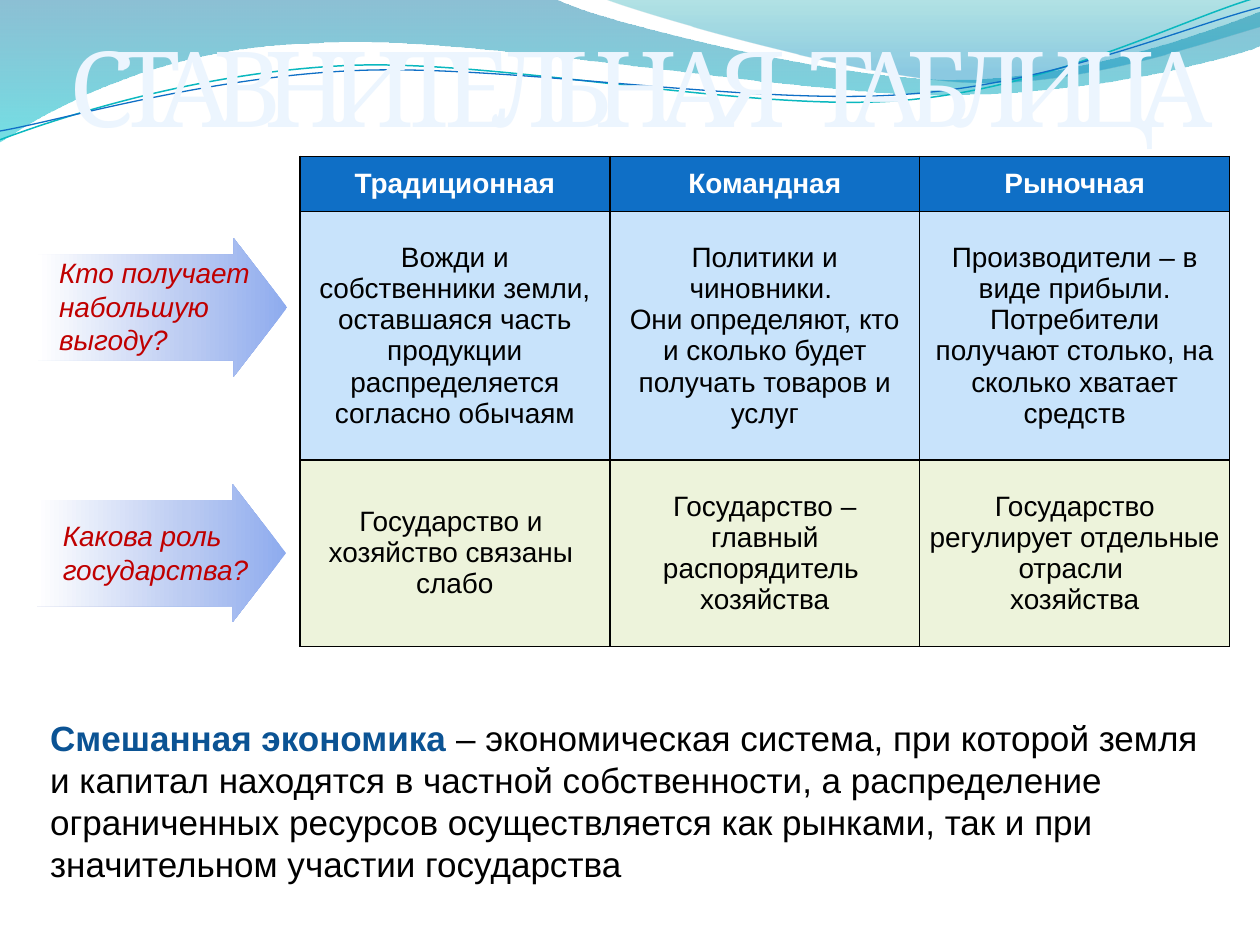
import math

import pptx
import pptx.dml.color
import pptx.enum.shapes
import pptx.enum.text
import pptx.oxml
import pptx.oxml.ns
import pptx.util
from pptx.util import Inches

NAMESPACE = pptx.oxml.ns.nsdecls("a")
ALIGN = pptx.enum.text.PP_ALIGN


def color(hex_string):
    return pptx.dml.color.RGBColor.from_string(hex_string)


def line_xml(tag, hex_string, points):
    return pptx.oxml.parse_xml(
        f'<a:{tag} {NAMESPACE} w="{round(points * 12700)}"><a:solidFill>'
        f'<a:srgbClr val="{hex_string}"/></a:solidFill></a:{tag}>')


def rotate(points, degrees, center):
    """Turn points clockwise about a center."""
    sine, cosine = math.sin(math.radians(degrees)), math.cos(math.radians(degrees))
    center_x, center_y = center
    return [(center_x + (x - center_x) * cosine - (y - center_y) * sine,
             center_y + (x - center_x) * sine + (y - center_y) * cosine)
            for x, y in points]


class SlideBuilder:
    font = "Arial"
    accent = "0F6FC6"
    dark = "0B5394"
    question = "C00000"
    border = "000000"

    def __init__(self, slide):
        self.slide = slide

    def gradient(self, shape, stops, angle):
        """Fill with (position %, colour, opacity %) stops; angle is clockwise."""
        shape.fill.background()
        stop_xml = "".join(
            f'<a:gs pos="{position * 1000}"><a:srgbClr val="{hex_string}">'
            f'<a:alpha val="{opacity * 1000}"/></a:srgbClr></a:gs>'
            for position, hex_string, opacity in stops)
        properties = shape._element.spPr
        no_fill = properties.find(pptx.oxml.ns.qn("a:noFill"))
        properties.replace(no_fill, pptx.oxml.parse_xml(
            f'<a:gradFill {NAMESPACE} rotWithShape="1"><a:gsLst>{stop_xml}</a:gsLst>'
            f'<a:lin ang="{angle * 60000}" scaled="0"/></a:gradFill>'))

    def freeform(self, points, curve_starts, close):
        """Draw points; at each curve start, the next three make a cubic curve."""
        points = [(Inches(x), Inches(y)) for x, y in points]
        builder = self.slide.shapes.build_freeform(*points[0], scale=1.0)
        builder.add_line_segments(points[1:], close=close)
        shape = builder.convert_to_shape()
        shape.shadow.inherit = False
        segments = list(shape._element.iter(pptx.oxml.ns.qn("a:lnTo")))
        for start in curve_starts:
            curve = pptx.oxml.parse_xml(f"<a:cubicBezTo {NAMESPACE}/>")
            segments[start].addprevious(curve)
            for segment in segments[start:start + 3]:
                curve.append(segment[0])
                segment.getparent().remove(segment)
        return shape

    def wave(self, points, curve_starts, stops):
        shape = self.freeform(points, curve_starts, True)
        self.gradient(shape, stops, 90)
        shape.line.fill.background()

    def curve(self, points, hex_string, width):
        tilt = 2.7
        level_points = rotate(points, tilt, (5, 0.58))
        shape = self.freeform(level_points, range(0, len(points) - 1, 3), False)
        shape.rotation = 360 - tilt
        shape.fill.background()
        shape.line.color.rgb = color(hex_string)
        shape.line.width = pptx.util.Pt(width)

    def arrow(self, left, top):
        shape = self.slide.shapes.add_shape(
            pptx.enum.shapes.MSO_SHAPE.RIGHT_ARROW,
            Inches(left), Inches(top), Inches(1.98), Inches(1.1))
        shape.adjustments[0], shape.adjustments[1] = 0.765, 0.387
        shape.shadow.inherit = False
        self.gradient(shape, [(0, "8EABEE", 100), (40, "BBCBF2", 100),
                              (100, "FFFFFF", 100)], 180)
        shape.line.fill.background()

    def run(self, paragraph, text, size, hex_string, bold=False, italic=False, font=None):
        run = paragraph.add_run()
        run.text = text
        run.font.name = font or self.font
        run.font.size = pptx.util.Pt(size)
        run.font.bold, run.font.italic = bold, italic
        run.font.color.rgb = color(hex_string)
        return run

    def text_box(self, left, top, width, height, wrap=True):
        box = self.slide.shapes.add_textbox(
            Inches(left), Inches(top), Inches(width), Inches(height))
        box.text_frame.word_wrap = wrap
        return box.text_frame

    def paragraphs(self, frame, lines, align, **style):
        for index, line in enumerate(lines):
            paragraph = frame.add_paragraph() if index else frame.paragraphs[0]
            paragraph.alignment = align
            self.run(paragraph, line, **style)

    def label(self, left, top, width, height, lines, wrap=True):
        self.paragraphs(self.text_box(left, top, width, height, wrap), lines,
                        ALIGN.LEFT, size=16, hex_string=self.question, italic=True)

    def title(self, first, second):
        frame = self.text_box(0.34, 0.13, 9.38, 1.11)
        frame.margin_left = 0
        paragraph = frame.paragraphs[0]
        paragraph.alignment = ALIGN.RIGHT
        # Letters are tightened; the word gap keeps its full width.
        for text, spacing in ((first, -10), (" ", 0), (second, -10)):
            run = self.run(paragraph, text, 60, "ECF5FE", font="Cambria")
            properties = run.font._element
            properties.set("spc", str(spacing * 100))
            properties.insert(0, line_xml("ln", self.dark, 0.75))

    def table(self, left, top, column_width, row_heights, fills, rows):
        columns = len(rows[0])
        table = self.slide.shapes.add_table(
            len(rows), columns, Inches(left), Inches(top),
            Inches(column_width * columns), Inches(sum(row_heights))).table
        for column in table.columns:
            column.width = Inches(column_width)
        for row_index, row in enumerate(rows):
            table.rows[row_index].height = Inches(row_heights[row_index])
            header = row_index == 0
            for column_index, lines in enumerate(row):
                cell = table.cell(row_index, column_index)
                cell.vertical_anchor = pptx.enum.text.MSO_ANCHOR.MIDDLE
                cell.margin_left = cell.margin_right = Inches(0.07 if column_index else 0.1)
                cell.margin_top = cell.margin_bottom = 0
                for side in ("lnL", "lnR", "lnT", "lnB"):
                    cell._tc.get_or_add_tcPr().append(line_xml(side, self.border, 1))
                cell.fill.solid()
                cell.fill.fore_color.rgb = color(fills[row_index])
                self.paragraphs(cell.text_frame, lines, ALIGN.CENTER, size=16, bold=header,
                                hex_string="FFFFFF" if header else "000000")


def main():
    presentation = pptx.Presentation()
    presentation.slide_width, presentation.slide_height = Inches(10), Inches(7.5)
    builder = SlideBuilder(presentation.slides.add_slide(presentation.slide_layouts[6]))

    builder.wave([(0, 0), (4.4, -0.01),
                  (4.76, 0.17), (6.64, 0.63), (7.58, 0.63),
                  (8.53, 0.63), (9.58, 0.26), (10, 0.09), (10.01, 0.36),
                  (9.83, 0.44), (8.7, 0.76), (7.46, 0.75),
                  (6.22, 0.75), (3.82, 0.28), (2.57, 0.34),
                  (1.29, 0.36), (0.46, 0.83), (-0.01, 1.13)],
                 (1, 4, 8, 11, 14), [(0, "0074A1", 45), (100, "00C6CF", 55)])
    builder.wave([(4.79, -0.01), (5.09, 0.11), (6.82, 0.62), (7.69, 0.65),
                  (8.56, 0.69), (9.61, 0.32), (10, 0.21), (10, 0)],
                 (0, 3), [(0, "00A1A9", 30), (80, "008BBF", 45)])
    builder.curve([(0, 1.11), (0.48, 0.93), (1.58, 0.57), (2.77, 0.52),
                   (3.95, 0.47), (5.93, 0.89), (7.13, 0.8),
                   (8.33, 0.71), (9.38, 0.15), (9.98, -0.02)], "0AB8BF", 0.85)
    builder.curve([(0, 1.04), (0.47, 0.96), (1.64, 0.61), (2.83, 0.56),
                   (4.03, 0.51), (5.97, 0.84), (7.17, 0.75),
                   (8.36, 0.67), (9.41, 0.21), (10, 0.06)], builder.accent, 0.75)

    builder.arrow(0.29, 3.84)
    builder.arrow(0.3, 1.89)
    builder.table(2.38, 1.24, 2.46, [0.44, 1.97, 1.48], [builder.accent, "C8E3FB", "EDF3DB"], [
        [["Традиционная"], ["Командная"], ["Рыночная"]],
        [["Вожди и собственники земли, оставшаяся часть продукции",
          "распределяется", "согласно обычаям"],
         ["Политики и чиновники. ",
          "Они определяют, кто и сколько будет получать товаров и услуг"],
         ["Производители – в виде прибыли.",
          "Потребители получают столько, на сколько хватает средств"]],
        [["Государство и ", "хозяйство связаны ", "слабо"],
         ["Государство – главный распорядитель ", "хозяйства"],
         ["Государство регулирует отдельные отрасли ", "хозяйства"]],
    ])
    builder.label(0.37, 1.98, 1.89, 0.91, ["Кто получает набольшую выгоду?"])
    builder.label(0.4, 4.07, 1.69, 0.64, ["Какова роль", "государства?"], wrap=False)
    builder.title("СТАВНИТЕЛЬНАЯ", "ТАБЛИЦА")

    definition = builder.text_box(0.3, 5.64, 9.5, 1.45).paragraphs[0]
    builder.run(definition, "Смешанная экономика ", 20, builder.dark, bold=True)
    builder.run(definition, "– экономическая система, при которой земля и капитал находятся "
                "в частной собственности, а распределение ограниченных ресурсов осуществляется "
                "как рынками, так и при значительном участии государства", 20, "000000")
    presentation.save("out.pptx")


if __name__ == "__main__":
    main()
